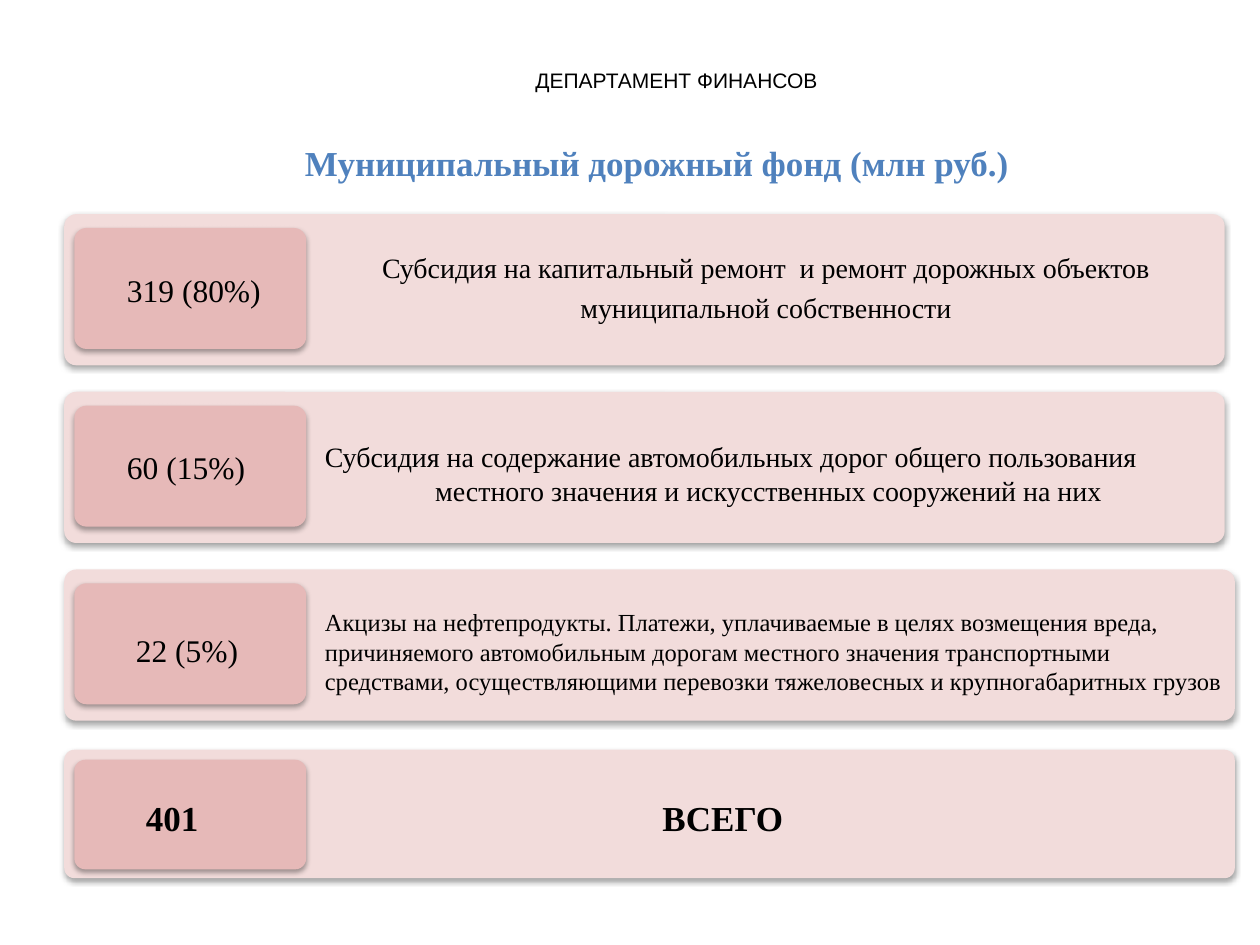
from dataclasses import dataclass

from lxml import etree
from pptx import Presentation
from pptx.dml.color import RGBColor
from pptx.enum.shapes import MSO_SHAPE
from pptx.enum.text import MSO_ANCHOR, MSO_AUTO_SIZE, PP_ALIGN
from pptx.oxml.ns import qn
from pptx.util import Inches, Pt

ROUND = MSO_SHAPE.ROUNDED_RECTANGLE
TOP, MIDDLE = MSO_ANCHOR.TOP, MSO_ANCHOR.MIDDLE
NO_FIT = MSO_AUTO_SIZE.NONE
LEFT, CENTER, JUSTIFY = PP_ALIGN.LEFT, PP_ALIGN.CENTER, PP_ALIGN.JUSTIFY


@dataclass(frozen=True)
class Theme:
    ink: str = "000000"
    accent: str = "4F81BD"
    panel: str = "F2DCDB"
    tile: str = "E6B9B8"
    serif: str = "Times New Roman"
    sans: str = "Arial"
    large: int = 20
    value: int = 18
    body: int = 16
    small: int = 14
    head: int = 12


class Deck:
    """Draws styled elements on the current slide."""

    def __init__(self, theme):
        self.theme = theme
        self.deck = Presentation()
        self.deck.slide_width, self.deck.slide_height = Inches(10), Inches(7.5)
        self.slide = self.deck.slides.add_slide(self.deck.slide_layouts[5])

    def put(self, frame, lines, size, bold=False, font=None, color=None):
        for i, (words, align) in enumerate(lines):
            para = frame.paragraphs[0] if i == 0 else frame.add_paragraph()
            para.alignment = align
            run = para.add_run()
            run.text = words
            run.font.name = font or self.theme.serif
            run.font.size = Pt(size)
            run.font.bold = bold
            run.font.color.rgb = RGBColor.from_string(color or self.theme.ink)

    def title(self, box, words):
        shape = self.slide.shapes.title
        shape.left, shape.top, shape.width, shape.height = map(Inches, box)
        frame = shape.text_frame
        frame.auto_size, frame.vertical_anchor = NO_FIT, TOP
        self.put(frame, [(words, LEFT)], self.theme.large, True, color=self.theme.accent)

    def text(self, box, lines, size, bold=False, font=None, wrap=True):
        frame = self.slide.shapes.add_textbox(*map(Inches, box)).text_frame
        frame.word_wrap = wrap
        self.put(frame, lines, size, bold, font)

    def block(self, box, color, curve):
        shape = self.slide.shapes.add_shape(ROUND, *map(Inches, box))
        shape.adjustments[0] = curve
        shape.fill.solid()
        shape.fill.fore_color.rgb = RGBColor.from_string(color)
        shape.line.fill.background()
        self.shade(shape)
        return shape

    def shade(self, shape):
        shape.shadow.inherit = False
        effects = shape.element.spPr.find(qn("a:effectLst"))
        outer = etree.SubElement(
            effects, qn("a:outerShdw"), blurRad=str(Pt(3.1)), dist=str(Pt(1.8)),
            dir="5400000", rotWithShape="0")
        tint = etree.SubElement(outer, qn("a:srgbClr"), val=self.theme.ink)
        etree.SubElement(tint, qn("a:alpha"), val="35000")

    def row(self, top, width, height, inset, depth):
        panel = self.block((0.51, top, width, height), self.theme.panel, 0.08)
        self.block((0.59, top + inset, 1.84, depth), self.theme.tile, 0.1)
        return panel

    def label(self, panel, lines):
        frame = panel.text_frame
        frame.word_wrap, frame.vertical_anchor = True, MIDDLE
        frame.margin_left = Inches(2)
        frame.margin_right = frame.margin_top = frame.margin_bottom = Inches(0.07)
        self.put(frame, lines, self.theme.body)
        for para in frame.paragraphs:
            para.line_spacing, para.space_after = 0.9, Pt(5.6)


def main():
    theme = Theme()
    deck = Deck(theme)
    deck.title((2.32, 1.07, 7.15, 0.44), "Муниципальный дорожный фонд (млн руб.)")
    deck.text((0.88, 0.49, 8.98, 0.3), [("ДЕПАРТАМЕНТ ФИНАНСОВ", CENTER)],
              theme.head, font=theme.sans)

    rows = [
        (1.7, 9.21, 0.91, 2.1, "319 (80%)"),
        (3.11, 9.21, 0.91, 3.51, "60 (15%)"),
        (4.52, 9.29, 0.98, 4.96, "22 (5%)"),
    ]
    panels = []
    for top, width, left, base, value in rows:
        panels.append(deck.row(top, width, 1.2, 0.11, 0.96))
        deck.text((left, base, 1.27, 0.4), [(value, LEFT)], theme.value, wrap=False)

    deck.label(panels[0], [
        ("Субсидия на капитальный ремонт  и ремонт дорожных объектов", CENTER),
        ("муниципальной собственности", CENTER),
    ])
    deck.text((2.48, 3.44, 7.24, 0.64), [
        ("Субсидия на содержание автомобильных дорог общего пользования", JUSTIFY),
        ("местного значения и искусственных сооружений на них", CENTER),
    ], theme.body)
    deck.text((2.48, 4.77, 7.45, 0.81), [
        ("Акцизы на нефтепродукты. Платежи, уплачиваемые в целях возмещения вреда, "
         "причиняемого автомобильным дорогам местного значения транспортными", LEFT),
        ("средствами, осуществляющими перевозки тяжеловесных и крупногабаритных грузов", LEFT),
    ], theme.small)

    deck.row(5.95, 9.29, 1.02, 0.08, 0.87)
    for left, width, words in [(1.06, 0.69, "401"), (5.16, 1.17, "ВСЕГО")]:
        deck.text((left, 6.27, width, 0.44), [(words, LEFT)], theme.large, True, wrap=False)

    deck.deck.save("out.pptx")


if __name__ == "__main__":
    main()
